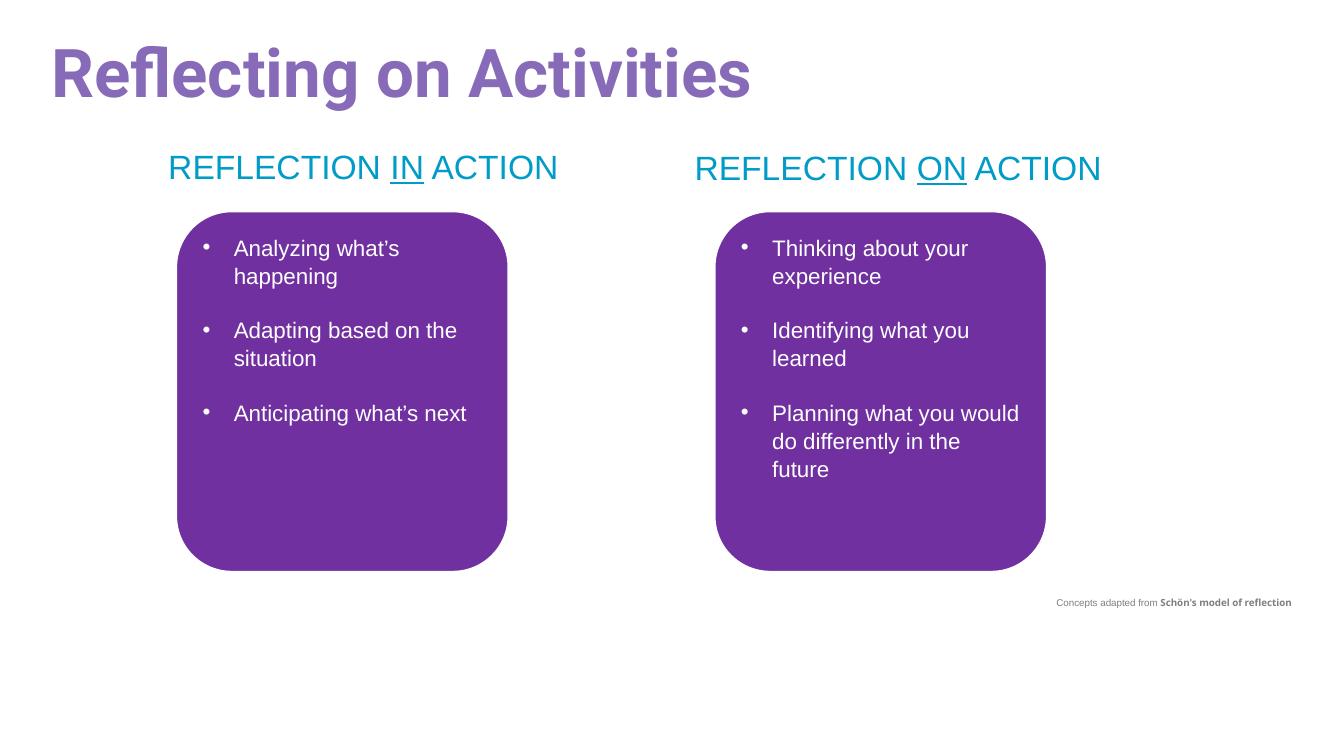
from lxml import etree
from pptx import Presentation
from pptx import util as u
from pptx.dml.color import RGBColor
from pptx.enum import shapes, text
from pptx.oxml.ns import qn

COLORS = {"title": "876AB8", "card": "7030A0", "heading": "009CC7",
          "white": "FFFFFF", "credit": "7F7F7F"}
CARD_LEFT, CARD_TOP, CARD_WIDTH, CARD_HEIGHT = 1.75, 2.1, 3.29, 3.57
COLUMN_STEP = 5.34
INDENT = u.Inches(0.31)
# Heading word, heading left and top, bullet points
COLUMNS = [
    ("IN", 1.57, 1.4, ["Analyzing what’s happening",
                       "Adapting based on the situation",
                       "Anticipating what’s next"]),
    ("ON", 6.79, 1.41, ["Thinking about your experience",
                        "Identifying what you learned",
                        "Planning what you would do differently in the future"]),
]


def style(font, name, size, color):
    font.name = name
    font.size = u.Pt(size)
    font.color.rgb = RGBColor.from_string(COLORS[color])


def add_line(left, top, width, height):
    """Add a wrapping text box and return its first paragraph."""
    box = page.shapes.add_textbox(*map(u.Inches, (left, top, width, height)))
    box.text_frame.word_wrap = True
    return box.text_frame.paragraphs[0]


deck = Presentation()
deck.slide_width, deck.slide_height = u.Inches(13.33), u.Inches(7.5)
page = deck.slides.add_slide(deck.slide_layouts[5])

title = page.shapes.title
title.left, title.top = u.Inches(0.41), u.Inches(0.25)
title.width, title.height = u.Inches(12.27), u.Inches(0.91)
title.text = "Reflecting on Activities"
title.text_frame.vertical_anchor = text.MSO_ANCHOR.TOP
para = title.text_frame.paragraphs[0]
para.alignment = text.PP_ALIGN.LEFT
style(para.font, "Roboto", 48, "title")
para.font.bold = True

for column, (word, left, top, points) in enumerate(COLUMNS):
    card = page.shapes.add_shape(
        shapes.MSO_SHAPE.ROUNDED_RECTANGLE,
        u.Inches(CARD_LEFT + column * COLUMN_STEP), u.Inches(CARD_TOP),
        u.Inches(CARD_WIDTH), u.Inches(CARD_HEIGHT))
    card.shadow.inherit = False
    card.fill.solid()
    card.fill.fore_color.rgb = RGBColor.from_string(COLORS["card"])
    card.line.color.rgb = RGBColor.from_string(COLORS["white"])
    card.line.width = u.Pt(1)
    frame = card.text_frame
    frame.word_wrap = True
    frame.vertical_anchor = text.MSO_ANCHOR.TOP
    for number, point in enumerate(points):
        para = frame.add_paragraph() if number else frame.paragraphs[0]
        para.text = point
        para.alignment = text.PP_ALIGN.LEFT
        para.line_spacing = 1.04
        if number:
            para.space_before = u.Pt(19)
        properties = para._p.get_or_add_pPr()
        properties.set("marL", str(INDENT))
        properties.set("indent", str(-INDENT))
        etree.SubElement(properties, qn("a:buFont")).set("typeface", "Arial")
        etree.SubElement(properties, qn("a:buChar")).set("char", "•")
        style(para.font, "Arial", 16, "white")

    heading = add_line(left, top, 4.29, 0.5)
    for part in ("REFLECTION ", word, " ACTION"):
        span = heading.add_run()
        span.text = part
        span.font.underline = part == word
    style(heading.font, "Arial", 24, "heading")

credit = add_line(10.38, 5.87, 2.84, 0.22)
for part, name in (("Concepts adapted from ", "Arial"),
                   ("Schön's model of reflection", "Open Sans")):
    span = credit.add_run()
    span.text = part
    style(span.font, name, 7, "credit")
    span.font.bold = name == "Open Sans"

deck.save("out.pptx")
